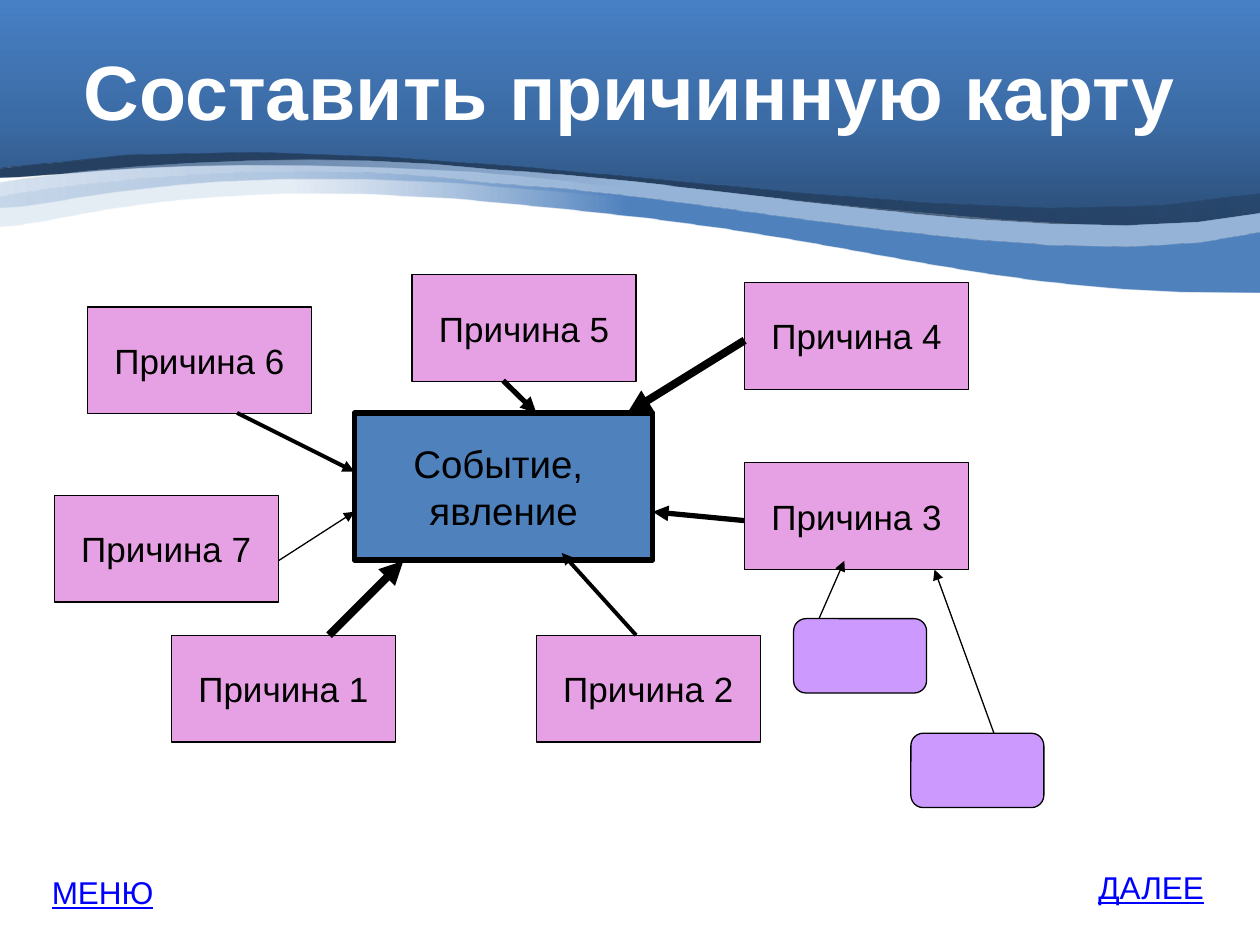
"""Build a slide with a cause map: seven causes around one event."""
from dataclasses import dataclass
from typing import Optional

import lxml.etree
import pptx
import pptx.dml.color
import pptx.enum.shapes
import pptx.enum.text
import pptx.oxml
import pptx.oxml.ns
import pptx.util

Pt = pptx.util.Pt
SHAPE = pptx.enum.shapes.MSO_SHAPE
ALIGN = pptx.enum.text.PP_ALIGN
ANCHOR = pptx.enum.text.MSO_ANCHOR
FONT = "Arial"
COLORS = {
    "sky_low": "2A4C75", "sky_mid": "3C6CA6", "sky_top": "4780C5",
    "navy": "254061", "mist": "95B3D7", "blue": "4F81BD",
    "cause": "E5A1E3", "detail": "CC99FF",
    "black": "000000", "white": "FFFFFF", "link": "0000FF",
}


@dataclass
class Wave:
    start: tuple
    segments: list
    stops: list
    angle: int = 0


@dataclass
class Box:
    left: float
    top: float
    width: float = 128
    height: float = 61
    text: str = ""
    fill: str = "cause"
    size: float = 20
    line: float = 0.75
    kind: int = SHAPE.RECTANGLE


@dataclass
class Arrow:
    x1: float
    y1: float
    x2: float
    y2: float
    width: float


WAVES = [
    Wave((-0.5, -0.5),
         [(720, -0.5), (720, 132), (480, 132, 207, 66, -0.5, 96)],
         [(0, "sky_low", 100), (50, "sky_mid", 100), (100, "sky_top", 100)], 270),
    Wave((722, 110),
         [(722, 132), (561, 153, 452, 113, 271, 98), (87, 88, 34, 101.5, 0, 101.5),
          (0, 96), (230, 60, 538, 145, 722, 110)],
         [(0, "navy", 100), (50, "navy", 100), (100, "navy", 60)]),
    Wave((720, 121.5),
         [(720, 152), (557, 153, 499, 124, 318, 109.5), (109, 88.5, 34, 119.5, 0, 119),
          (0, 104.5), (33, 98, 166, 83, 282, 97), (402, 102, 608, 146, 720, 121.5)],
         [(0, "mist", 38), (50, "mist", 100), (100, "mist", 100)]),
    Wave((720, 132.5),
         [(720, 167), (557, 168.5, 499, 135.5, 318, 119), (109, 95, 34, 129.5, 0, 129.5),
          (0, 112.5), (33, 106, 166, 88.5, 282, 105), (402, 110, 608, 160.5, 720, 132.5)],
         [(23, "mist", 23), (50, "blue", 100), (100, "blue", 100)]),
]
CAUSES = [(98, 363), (306.5, 363), (425.5, 264.5), (425.5, 161.5),
          (235.5, 157), (50, 175.5), (31, 283)]
DETAILS = [(453.5, 353.5), (520.5, 419)]
BOXES = [
    Box(202.5, 236, 170.5, 84, "Событие, \nявление", "blue", 22, 3),
    *[Box(x, y, text=f"Причина {n}") for n, (x, y) in enumerate(CAUSES, 1)],
    *[Box(x, y, 76, 42.5, fill="detail", kind=SHAPE.ROUNDED_RECTANGLE)
      for x, y in DETAILS],
]
ARROWS = [
    Arrow(188, 363, 230.5, 320.5, 4.5),
    Arrow(363.5, 363, 321, 316, 2.25),
    Arrow(425.5, 297.5, 373, 292.5, 3),
    Arrow(468, 353.5, 482.5, 320.5, 0.75),
    Arrow(568, 419, 534, 325.5, 0.75),
    Arrow(425.5, 194.5, 358.5, 236, 4.5),
    Arrow(287.5, 217.5, 306.5, 236, 3),
    Arrow(135.5, 236, 202.5, 269.5, 2.25),
    Arrow(159, 320.5, 202.5, 292.5, 0.75),
]
LINKS = [("ДАЛЕЕ", 620.5, 492.5), ("МЕНЮ", 22.5, 495.5)]


def rgb(name: str) -> pptx.dml.color.RGBColor:
    """Return the named colour."""
    return pptx.dml.color.RGBColor.from_string(COLORS[name])


def write(tf, text: str, *, size: float, color: str = "black", bold: bool = False,
          underline: Optional[bool] = None, align=ALIGN.CENTER,
          anchor=ANCHOR.MIDDLE, wrap: bool = True) -> None:
    """Fill a text frame, one paragraph for each line of text."""
    tf.word_wrap = wrap
    tf.vertical_anchor = anchor
    for i, line in enumerate(text.split("\n")):
        p = tf.add_paragraph() if i else tf.paragraphs[0]
        p.alignment = align
        r = p.add_run()
        r.text = line
        r.font.name, r.font.size = FONT, Pt(size)
        r.font.bold, r.font.underline = bold, underline
        r.font.color.rgb = rgb(color)


def trace(wave: Wave, steps: int = 10) -> list:
    """Return the outline points of a wave, with its Bezier curves sampled."""
    points = [wave.start]
    for seg in wave.segments:
        if len(seg) == 2:
            points.append(seg)
            continue
        knots = [points[-1], seg[:2], seg[2:4], seg[4:]]
        for i in range(1, steps + 1):
            t = i / steps
            weights = ((1 - t) ** 3, 3 * t * (1 - t) ** 2, 3 * t * t * (1 - t), t ** 3)
            points.append(tuple(sum(w * k[axis] for w, k in zip(weights, knots))
                                for axis in (0, 1)))
    return [(Pt(x), Pt(y)) for x, y in points]


def draw_wave(s, wave: Wave) -> None:
    """Draw one gradient wave."""
    first, *rest = trace(wave)
    builder = s.shapes.build_freeform(*first, scale=1.0)
    builder.add_line_segments(rest, close=True)
    sp = builder.convert_to_shape()
    sp.shadow.inherit = False
    sp.line.fill.background()
    sp.fill.gradient()
    stops = "".join(
        f'<a:gs pos="{pos * 1000}"><a:srgbClr val="{COLORS[color]}">'
        f'<a:alpha val="{alpha * 1000}"/></a:srgbClr></a:gs>'
        for pos, color, alpha in wave.stops)
    grad = pptx.oxml.parse_xml(
        f'<a:gradFill {pptx.oxml.ns.nsdecls("a")} rotWithShape="1"><a:gsLst>{stops}'
        f'</a:gsLst><a:lin ang="{wave.angle * 60000}" scaled="0"/></a:gradFill>')
    old = sp._element.spPr.find(pptx.oxml.ns.qn("a:gradFill"))
    sp._element.spPr.replace(old, grad)


def draw_box(s, box: Box) -> None:
    """Draw one filled box with its label."""
    sp = s.shapes.add_shape(box.kind, Pt(box.left), Pt(box.top),
                            Pt(box.width), Pt(box.height))
    sp.shadow.inherit = False
    sp.fill.solid()
    sp.fill.fore_color.rgb = rgb(box.fill)
    sp.line.color.rgb = rgb("black")
    sp.line.width = Pt(box.line)
    if box.text:
        write(sp.text_frame, box.text, size=box.size, wrap=False)


def draw_arrow(s, arrow: Arrow) -> None:
    """Draw one straight arrow."""
    sp = s.shapes.add_connector(pptx.enum.shapes.MSO_CONNECTOR.STRAIGHT,
                                Pt(arrow.x1), Pt(arrow.y1), Pt(arrow.x2), Pt(arrow.y2))
    sp.line.color.rgb = rgb("black")
    sp.line.width = Pt(arrow.width)
    qn = pptx.oxml.ns.qn
    lxml.etree.SubElement(sp.line._get_or_add_ln(), qn("a:tailEnd"), type="triangle")
    lxml.etree.SubElement(sp._element.spPr, qn("a:effectLst"))


def main() -> None:
    """Build and save the slide."""
    prs = pptx.Presentation()
    prs.slide_width, prs.slide_height = Pt(720), Pt(540)
    s = prs.slides.add_slide(prs.slide_layouts[5])
    for wave in WAVES:
        draw_wave(s, wave)
    title = s.shapes.title
    title.left, title.top, title.width, title.height = Pt(36), Pt(6), Pt(648), Pt(90)
    write(title.text_frame, "Составить причинную карту", size=44, color="white", bold=True)
    s.shapes._spTree.append(title._element)
    for box in BOXES:
        draw_box(s, box)
    for arrow in ARROWS:
        draw_arrow(s, arrow)
    for text, left, top in LINKS:
        sp = s.shapes.add_textbox(Pt(left), Pt(top), Pt(79), Pt(29))
        write(sp.text_frame, text, size=18, color="link", underline=True,
              align=ALIGN.LEFT, anchor=ANCHOR.TOP)
        sp.text_frame.auto_size = pptx.enum.text.MSO_AUTO_SIZE.SHAPE_TO_FIT_TEXT
    prs.save("out.pptx")


if __name__ == "__main__":
    main()
